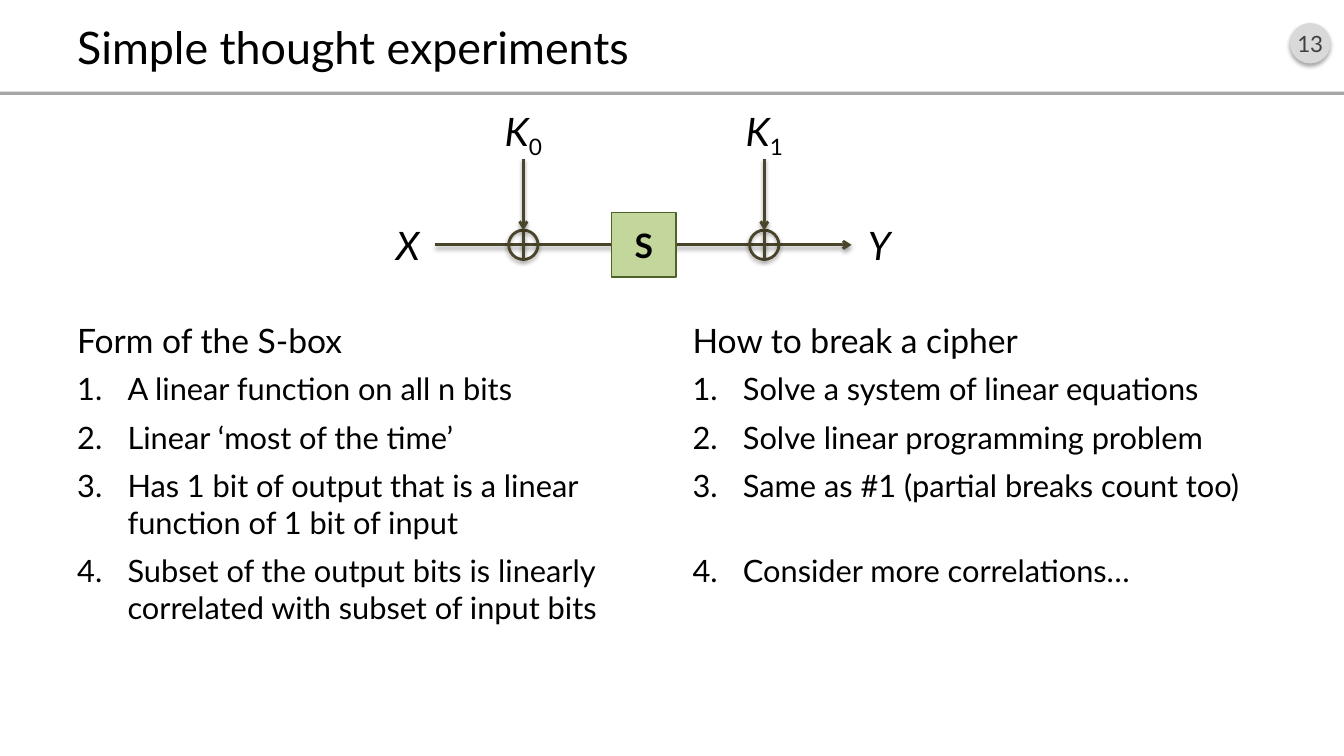
import copy

import lxml.etree
import pptx
import pptx.dml.color
import pptx.enum.shapes
import pptx.enum.text
import pptx.oxml.ns
import pptx.util

Cm = pptx.util.Cm
Pt = pptx.util.Pt
qn = pptx.oxml.ns.qn
ANCHOR = pptx.enum.text.MSO_ANCHOR
ALIGN = pptx.enum.text.PP_ALIGN
SHAPE = pptx.enum.shapes.MSO_SHAPE

FONT = "Lato"
COLORS = {
    "text": "000000",
    "badge": "D9D9D9",
    "badge_text": "404040",
    "rule": "A6A6A6",
    "wire": "4A452A",
    "sbox": "C3D69B",
    "sbox_border": "4F6228",
}
WIRE_Y = 6.17
KEY_XS = [13.19, 19.26]
XOR_SIZE = 0.74
SBOX_SIZE = 1.63
COLUMNS = [
    (1.69, "Form of the S-box", [
        "A linear function on all n bits",
        "Linear ‘most of the time’",
        "Has 1 bit of output that is a linear function of 1 bit of input",
        "Subset of the output bits is linearly correlated with subset of input bits",
    ]),
    (17.2, "How to break a cipher", [
        "Solve a system of linear equations",
        "Solve linear programming problem",
        "Same as #1 (partial breaks count too)\n",
        "Consider more correlations…",
    ]),
]


def rgb(name):
    return pptx.dml.color.RGBColor.from_string(COLORS[name])


def add_run(paragraph, text, size, color="text", bold=False, italic=False):
    run = paragraph.add_run()
    run.text = text
    run.font.name = FONT
    run.font.size = Pt(size)
    run.font.bold = bold
    run.font.italic = italic
    run.font.color.rgb = rgb(color)
    return run


def add_shadow(shape, alpha):
    properties = shape._element.spPr
    effects = properties.find(qn("a:effectLst"))
    if effects is None:
        effects = lxml.etree.SubElement(properties, qn("a:effectLst"))
    shadow = lxml.etree.SubElement(
        effects, qn("a:outerShdw"), blurRad=str(Pt(3.1)), dist=str(Pt(1.8)),
        dir="5400000", rotWithShape="0")
    black = lxml.etree.SubElement(shadow, qn("a:srgbClr"), val="000000")
    lxml.etree.SubElement(black, qn("a:alpha"), val=str(alpha * 1000))


def add_figure(shapes, kind, left, top, width, height, fill=None, line=None, weight=2):
    shape = shapes.add_shape(kind, Cm(left), Cm(top), Cm(width), Cm(height))
    shape.shadow.inherit = False
    if fill:
        shape.fill.solid()
        shape.fill.fore_color.rgb = rgb(fill)
    else:
        shape.fill.background()
    if line:
        shape.line.color.rgb = rgb(line)
        shape.line.width = Pt(weight)
    else:
        shape.line.fill.background()
    return shape


def add_caption(shape, text, size, color="text", bold=False):
    frame = shape.text_frame
    frame.margin_left = frame.margin_right = frame.margin_top = frame.margin_bottom = 0
    frame.word_wrap = False
    frame.vertical_anchor = ANCHOR.MIDDLE
    paragraph = frame.paragraphs[0]
    paragraph.alignment = ALIGN.CENTER
    add_run(paragraph, text, size, color, bold)


def add_wire(shapes, x1, y1, x2, y2, arrow=False):
    wire = shapes.add_connector(
        pptx.enum.shapes.MSO_CONNECTOR.STRAIGHT, Cm(x1), Cm(y1), Cm(x2), Cm(y2))
    wire.line.color.rgb = rgb("wire")
    wire.line.width = Pt(2)
    if arrow:
        lxml.etree.SubElement(wire.line._get_or_add_ln(), qn("a:tailEnd"), type="arrow")
    add_shadow(wire, 38)


def add_symbol(shapes, center, top, width, letter, subscript=""):
    box = shapes.add_textbox(Cm(center - width / 2), Cm(top), Cm(width), Cm(1.45))
    box.text_frame.word_wrap = True
    paragraph = box.text_frame.paragraphs[0]
    paragraph.alignment = ALIGN.CENTER
    add_run(paragraph, letter, 28, italic=True)
    if subscript:
        run = add_run(paragraph, subscript, 28)
        run.font._element.set("baseline", "-25000")


def add_key(shapes, x, index):
    top, bottom = WIRE_Y - XOR_SIZE / 2, WIRE_Y + XOR_SIZE / 2
    add_symbol(shapes, x, 2.57, 1.96, "K", index)
    xor = add_figure(shapes, SHAPE.OVAL, x - XOR_SIZE / 2, top, XOR_SIZE, XOR_SIZE, line="wire")
    add_shadow(xor, 35)
    add_wire(shapes, x, top, x, bottom)
    add_wire(shapes, x, 4.01, x, top, arrow=True)


def add_cipher(slide):
    shapes = slide.shapes.add_group_shape().shapes
    add_symbol(shapes, 10.28, 5.46, 1.4, "X")
    add_symbol(shapes, 22.16, 5.46, 1.4, "Y")
    add_wire(shapes, 10.97, WIRE_Y, 21.46, WIRE_Y, arrow=True)
    for index, x in enumerate(KEY_XS):
        add_key(shapes, x, str(index))
    sbox = add_figure(
        shapes, SHAPE.RECTANGLE, sum(KEY_XS) / 2 - SBOX_SIZE / 2, WIRE_Y - SBOX_SIZE / 2,
        SBOX_SIZE, SBOX_SIZE, "sbox", "sbox_border", 1)
    add_caption(sbox, "S", 24, bold=True)


def place(placeholder, left, top, width, height, anchor):
    placeholder.left, placeholder.top = Cm(left), Cm(top)
    placeholder.width, placeholder.height = Cm(width), Cm(height)
    frame = placeholder.text_frame
    frame.auto_size = pptx.enum.text.MSO_AUTO_SIZE.NONE
    frame.word_wrap = True
    frame.vertical_anchor = anchor
    return frame


def fill_line(paragraph, text, size, space):
    paragraph.alignment = ALIGN.LEFT
    paragraph.space_before = Pt(space)
    run = add_run(paragraph, text.rstrip("\n"), size)
    if text.endswith("\n"):
        paragraph.add_line_break()
        paragraph._p[-1].append(copy.deepcopy(run.font._element))


def fill_list(frame, items):
    for index, item in enumerate(items):
        paragraph = frame.add_paragraph() if index else frame.paragraphs[0]
        fill_line(paragraph, item, 22, 8)
        properties = paragraph._p.get_or_add_pPr()
        properties.set("marL", str(Cm(1.27)))
        properties.set("indent", str(-Cm(1.27)))
        lxml.etree.SubElement(properties, qn("a:buFont"), typeface=FONT)
        lxml.etree.SubElement(properties, qn("a:buAutoNum"), type="arabicPeriod")


def main():
    presentation = pptx.Presentation()
    presentation.slide_width, presentation.slide_height = Cm(33.87), Cm(19.05)
    slide = presentation.slides.add_slide(presentation.slide_layouts[4])
    title, *bodies = slide.placeholders

    badge = add_figure(slide.shapes, SHAPE.OVAL, 32.51, 0.58, 1.02, 1.02, "badge")
    add_shadow(badge, 35)
    add_caption(badge, "13", 16, "badge_text")
    add_figure(slide.shapes, SHAPE.RECTANGLE, 0, 2.31, 33.87, 0.08, "rule")

    title_frame = place(title, 1.69, 0.41, 30.48, 1.52, ANCHOR.MIDDLE)
    fill_line(title_frame.paragraphs[0], "Simple thought experiments", 32, 0)
    for (left, heading, items), head, body in zip(COLUMNS, bodies[::2], bodies[1::2]):
        head_frame = place(head, left, 7.42, 14.96, 1.78, ANCHOR.BOTTOM)
        fill_line(head_frame.paragraphs[0], heading, 24, 8)
        fill_list(place(body, left, 9.2, 14.96, 9.85, ANCHOR.TOP), items)
    add_cipher(slide)
    presentation.save("out.pptx")


if __name__ == "__main__":
    main()
